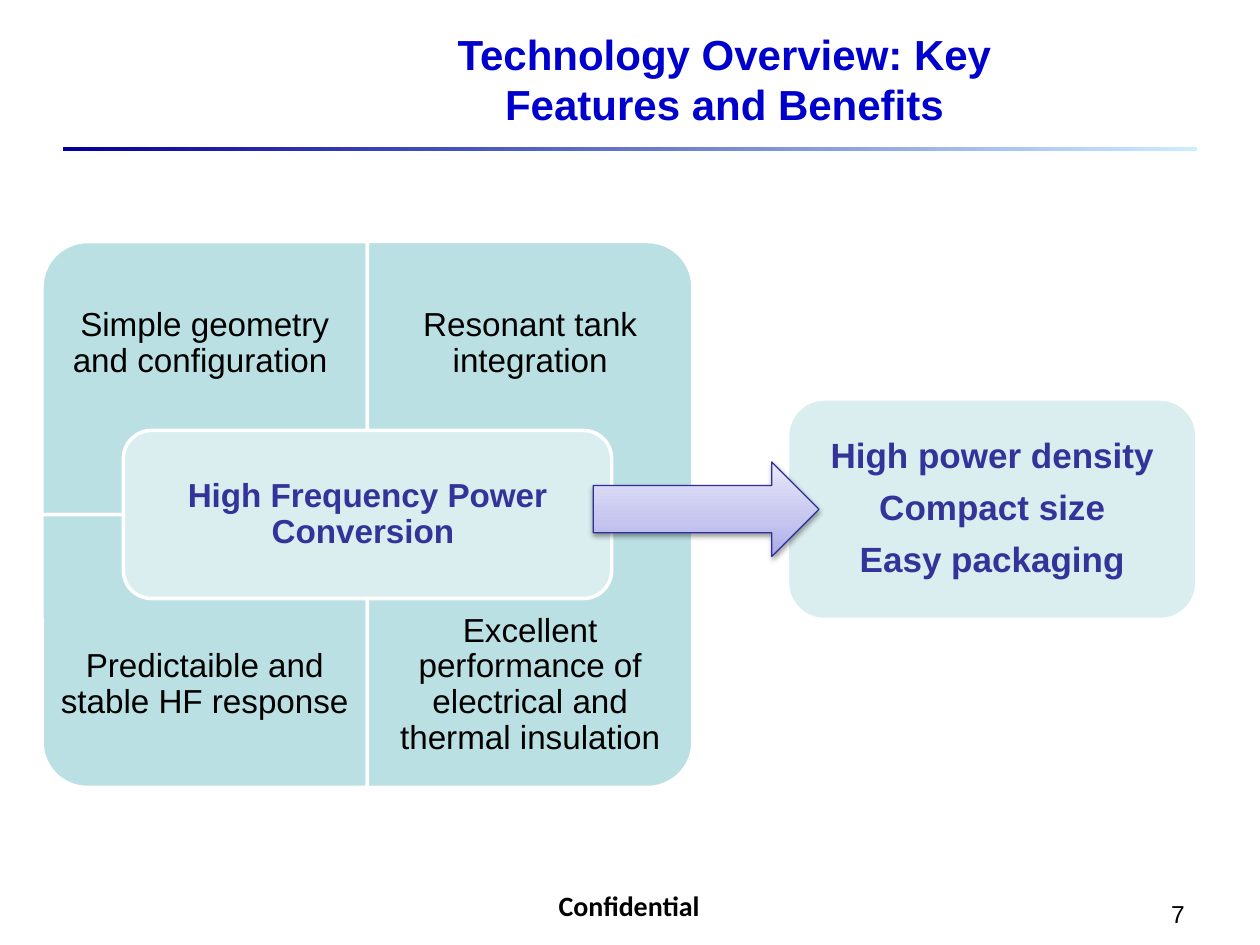
from dataclasses import dataclass

from pptx import Presentation
from pptx.dml.color import RGBColor
from pptx.enum.shapes import MSO_SHAPE
from pptx.enum.text import MSO_ANCHOR, PP_ALIGN
from pptx.oxml import parse_xml
from pptx.oxml.ns import nsdecls, qn
from pptx.shapes.autoshape import Shape
from pptx.slide import Slide
from pptx.util import Pt

COLORS = {
    "black": "000000",
    "white": "FFFFFF",
    "title": "0000CC",
    "navy": "000099",
    "sky": "CCECFF",
    "tile": "BBE0E3",
    "panel": "DAEDEF",
    "accent": "333399",
    "arrow_line": "2F2F98",
    "arrow_dark": "A9A9E9",
    "arrow_middle": "C4C4EF",
    "arrow_light": "E8E8FA",
}


@dataclass(frozen=True)
class Box:
    left: float
    top: float
    width: float
    height: float

    def inset(self, horizontal: float, vertical: float) -> "Box":
        return Box(self.left + horizontal, self.top + vertical,
                   self.width - 2 * horizontal, self.height - 2 * vertical)

    def turned(self) -> "Box":
        shift = (self.width - self.height) / 2
        return Box(self.left + shift, self.top - shift, self.height, self.width)


@dataclass(frozen=True)
class TextStyle:
    size: float
    color: str = "black"
    bold: bool = False
    font: str = "Arial"
    align: PP_ALIGN = PP_ALIGN.CENTER
    anchor: MSO_ANCHOR = MSO_ANCHOR.MIDDLE
    margins: tuple[float, float] = (7.2, 3.6)
    line_spacing: float = 1.0
    space_after: float = 0


@dataclass(frozen=True)
class Feature:
    text: str
    column: int
    row: int
    rotation: int


TITLE = TextStyle(24, "title", True)
FOOTER = TextStyle(16, bold=True, font="Calibri", anchor=MSO_ANCHOR.TOP)
NUMBER = TextStyle(14, align=PP_ALIGN.RIGHT, anchor=MSO_ANCHOR.TOP)
FEATURE = TextStyle(19, margins=(10.8, 10.8), line_spacing=0.9)
CORE = TextStyle(19, "accent", True, margins=(6, 6), line_spacing=0.9)
BENEFIT = TextStyle(20, "accent", True, margins=(6, 6), line_spacing=0.9, space_after=8)

GRID_LEFT, GRID_TOP = 24, 138
TILE_WIDTH, TILE_HEIGHT, TILE_TEXT_HEIGHT = 186, 156, 117
FEATURES = [
    Feature("Simple geometry and configuration ", 0, 0, 270),
    Feature("Resonant tank integration", 1, 0, 0),
    Feature("Predictaible and stable HF response", 0, 1, 180),
    Feature("Excellent performance of electrical and thermal insulation", 1, 1, 90),
]
BENEFITS = ["High power density", "Compact size", "Easy packaging"]


def rgb(name: str) -> RGBColor:
    return RGBColor.from_string(COLORS[name])


def add_text(slide: Slide, box: Box, lines: list[str], style: TextStyle) -> None:
    shape = slide.shapes.add_textbox(Pt(box.left), Pt(box.top), Pt(box.width), Pt(box.height))
    frame = shape.text_frame
    frame.word_wrap = True
    frame.vertical_anchor = style.anchor
    frame.margin_left = frame.margin_right = Pt(style.margins[0])
    frame.margin_top = frame.margin_bottom = Pt(style.margins[1])
    for index, line in enumerate(lines):
        paragraph = frame.add_paragraph() if index else frame.paragraphs[0]
        paragraph.alignment = style.align
        paragraph.line_spacing = style.line_spacing
        paragraph.space_after = Pt(style.space_after)
        run = paragraph.add_run()
        run.text = line
        run.font.name = style.font
        run.font.size = Pt(style.size)
        run.font.bold = style.bold
        run.font.color.rgb = rgb(style.color)


def add_panel(slide: Slide, kind: MSO_SHAPE, box: Box, fill: str,
              line: str | None = "white", line_width: float = 2) -> Shape:
    shape = slide.shapes.add_shape(kind, Pt(box.left), Pt(box.top), Pt(box.width), Pt(box.height))
    shape.shadow.inherit = False
    shape.fill.solid()
    shape.fill.fore_color.rgb = rgb(fill)
    if line is None:
        shape.line.fill.background()
    else:
        shape.line.color.rgb = rgb(line)
        shape.line.width = Pt(line_width)
    return shape


def set_gradient(shape: Shape, stops: list[tuple[int, str]], angle: int) -> None:
    stop_xml = "".join(
        f'<a:gs pos="{position * 1000}"><a:srgbClr val="{COLORS[name]}"/></a:gs>'
        for position, name in stops)
    properties = shape.element.spPr
    properties.replace(properties.find(qn("a:solidFill")), parse_xml(
        f'<a:gradFill {nsdecls("a")} rotWithShape="1"><a:gsLst>{stop_xml}</a:gsLst>'
        f'<a:lin ang="{angle * 60000}" scaled="0"/></a:gradFill>'))


def set_shadow(shape: Shape, blur: float, distance: float, angle: int, opacity: int) -> None:
    shape.element.spPr.find(qn("a:effectLst")).append(parse_xml(
        f'<a:outerShdw {nsdecls("a")} blurRad="{Pt(blur)}" dist="{Pt(distance)}" '
        f'dir="{angle * 60000}" rotWithShape="0"><a:srgbClr val="{COLORS["black"]}">'
        f'<a:alpha val="{opacity * 1000}"/></a:srgbClr></a:outerShdw>'))


def add_feature(slide: Slide, feature: Feature) -> None:
    tile = Box(GRID_LEFT + feature.column * TILE_WIDTH,
               GRID_TOP + feature.row * TILE_HEIGHT, TILE_WIDTH, TILE_HEIGHT)
    frame = tile.turned() if feature.rotation % 180 else tile
    shape = add_panel(slide, MSO_SHAPE.ROUND_1_RECTANGLE, frame, "tile")
    shape.rotation = feature.rotation
    text_top = tile.top + feature.row * (TILE_HEIGHT - TILE_TEXT_HEIGHT)
    add_text(slide, Box(tile.left, text_top, TILE_WIDTH, TILE_TEXT_HEIGHT),
             [feature.text], FEATURE)


def main() -> None:
    presentation = Presentation()
    presentation.slide_width, presentation.slide_height = Pt(720), Pt(540)
    slide = presentation.slides.add_slide(presentation.slide_layouts[6])

    rule = add_panel(slide, MSO_SHAPE.RECTANGLE, Box(36, 84, 648, 2.25), "navy", None)
    set_gradient(rule, [(0, "navy"), (100, "sky")], 0)
    add_text(slide, Box(245.5, 504, 228, 26.6), ["Confidential"], FOOTER)

    benefit_box = Box(450, 228, 234, 126)
    add_panel(slide, MSO_SHAPE.ROUNDED_RECTANGLE, benefit_box, "panel")
    add_text(slide, benefit_box.inset(8.5, 6), BENEFITS, BENEFIT)

    add_text(slide, Box(216, 18, 396, 54), ["Technology Overview: Key Features and Benefits"], TITLE)
    add_text(slide, Box(516, 510, 168, 19.5), ["7"], NUMBER)

    for feature in FEATURES:
        add_feature(slide, feature)
    core_box = Box(70.5, 246, 279, 96)
    add_panel(slide, MSO_SHAPE.ROUNDED_RECTANGLE, core_box, "panel")
    add_text(slide, core_box.inset(4.7, 4.7), ["High Frequency Power Conversion "], CORE)

    arrow = add_panel(slide, MSO_SHAPE.RIGHT_ARROW, Box(339, 264, 129, 54),
                      "arrow_middle", "arrow_line", 0.75)
    set_gradient(arrow, [(0, "arrow_dark"), (35, "arrow_middle"), (100, "arrow_light")], 270)
    set_shadow(arrow, 3.1, 1.6, 90, 38)

    presentation.save("out.pptx")


if __name__ == "__main__":
    main()
